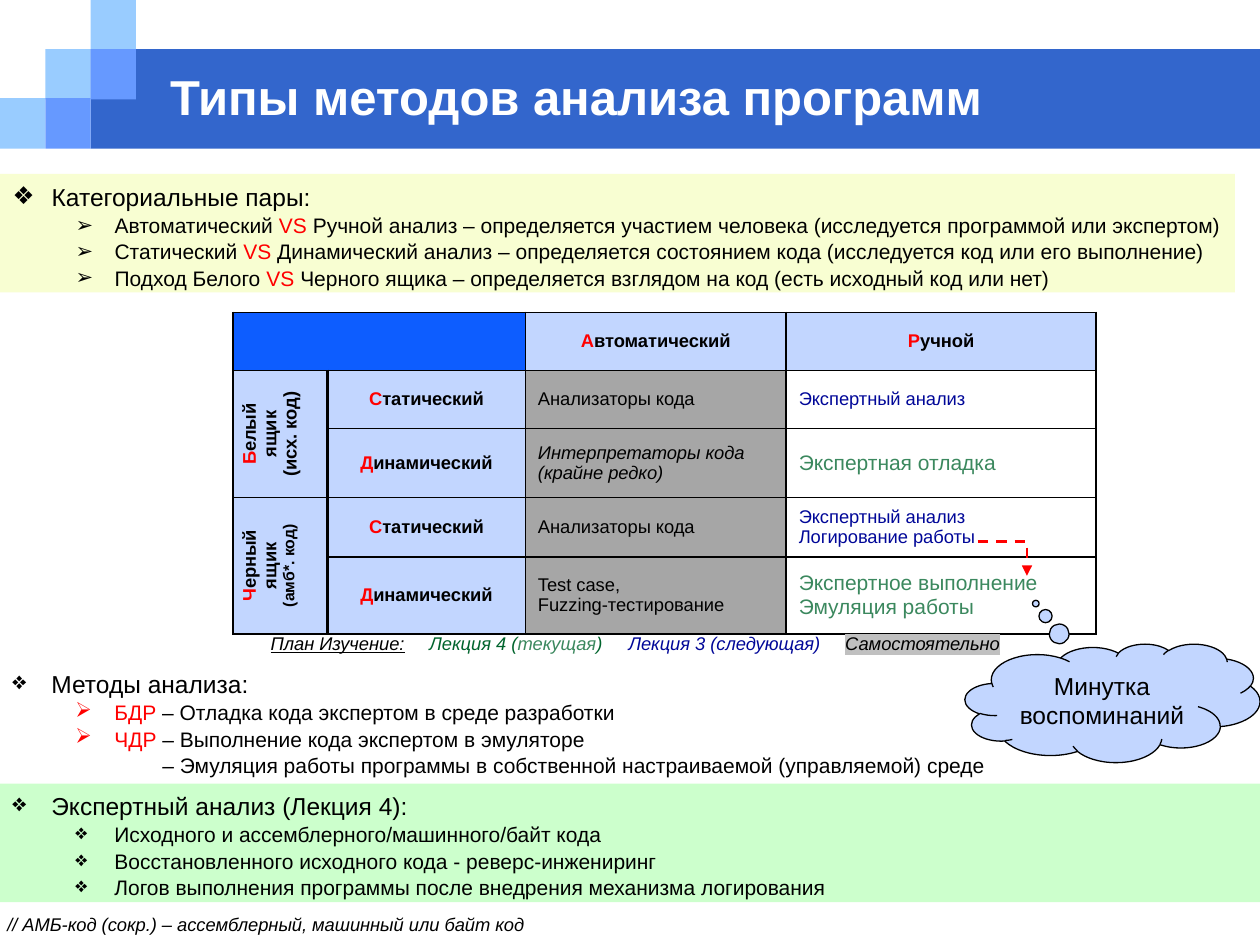
from dataclasses import dataclass, replace
from itertools import accumulate

from lxml.etree import SubElement
from pptx import Presentation
from pptx.dml.color import RGBColor
from pptx.enum.dml import MSO_LINE
from pptx.enum.shapes import MSO_CONNECTOR, MSO_SHAPE
from pptx.enum.text import MSO_ANCHOR, MSO_AUTO_SIZE, PP_ALIGN
from pptx.oxml.ns import qn
from pptx.util import Inches, Pt

BLACK, RED, NAVY, GREEN, DARK_GREEN = "000000", "FF0000", "000798", "3B885E", "00642D"
PALE_BLUE, GRAY = "C2D6FF", "A6A6A6"


@dataclass(frozen=True)
class Span:
    text: str
    color: str = BLACK
    size: float = 10.5
    bold: bool = False
    italic: bool = False
    underline: bool = False
    highlight: str = ""


@dataclass(frozen=True)
class Item:
    spans: list
    bullet: str = "➢"
    level: int = 1
    indent: float = 0.81


@dataclass(frozen=True)
class Cell:
    lines: list
    fill: str = ""
    centered: bool = False
    vertical: bool = False


def rgb(color: str) -> RGBColor:
    return RGBColor.from_string(color)


def write(paragraph, spans: list) -> None:
    for index, span in enumerate(spans):
        written = len(paragraph.runs)
        if index == 0:
            paragraph.text = span.text
        else:
            paragraph.add_run().text = span.text
        for run in paragraph.runs[written:]:
            font = run.font
            font.name, font.size = "Arial", Pt(span.size)
            font.bold, font.italic, font.underline = span.bold, span.italic, span.underline
            font.color.rgb = rgb(span.color)
            if span.highlight:
                highlight = SubElement(run._r.rPr, qn("a:highlight"))
                SubElement(highlight, qn("a:srgbClr"), val=span.highlight)
                run._r.rPr.find(qn("a:solidFill")).addnext(highlight)


def place(shape, left: float, top: float, width: float, height: float) -> None:
    shape.left, shape.top = Inches(left), Inches(top)
    shape.width, shape.height = Inches(width), Inches(height)


def add_text_box(slide, left: float, top: float, width: float, height: float):
    box = slide.shapes.add_textbox(Inches(left), Inches(top), Inches(width), Inches(height))
    box.text_frame.word_wrap = True
    return box


def add_filled_shape(slide, kind, box: tuple, fill: str):
    shape = slide.shapes.add_shape(kind, *map(Inches, box))
    shape.shadow.inherit = False
    shape.fill.solid()
    shape.fill.fore_color.rgb = rgb(fill)
    shape.line.fill.background()
    return shape


def fill_list(shape, heading: str, items: list, fill: str = "") -> None:
    if fill:
        shape.fill.solid()
        shape.fill.fore_color.rgb = rgb(fill)
    frame = shape.text_frame
    frame.word_wrap, frame.auto_size = True, MSO_AUTO_SIZE.NONE
    frame.vertical_anchor = MSO_ANCHOR.TOP
    entries = [Item([Span(heading, size=14)], "❖", 0, 0.31), *items]
    for index, item in enumerate(entries):
        paragraph = frame.add_paragraph() if index else frame.paragraphs[0]
        write(paragraph, item.spans)
        paragraph.level, paragraph.line_spacing = item.level, 1.05
        paragraph.space_before = paragraph.space_after = Pt(0)
        properties = paragraph._p.get_or_add_pPr()
        properties.set("marL", str(Inches(item.indent)))
        properties.set("indent", str(-Inches(0.31) if item.bullet else 0))
        if item.bullet:
            SubElement(properties, qn("a:buChar"), char=item.bullet)
        else:
            SubElement(properties, qn("a:buNone"))


def versus(first: str, second: str) -> Item:
    return Item([Span(first + " ", size=12), Span("VS", RED, 12), Span(" " + second, size=12)])


def label(first: str, rest: str, vertical: bool = False, note: Span = None) -> Cell:
    lines = [[Span(first, RED, bold=True), Span(rest, bold=True)]]
    if note:
        lines.append([replace(note, bold=True)])
    return Cell(lines, PALE_BLUE, True, vertical)


def body(*spans: Span, fill: str = "") -> Cell:
    return Cell([[span] for span in spans], fill)


def fill_cell(table_cell, cell: Cell) -> None:
    table_cell.vertical_anchor = MSO_ANCHOR.MIDDLE
    for index, spans in enumerate(cell.lines):
        frame = table_cell.text_frame
        paragraph = frame.add_paragraph() if index else frame.paragraphs[0]
        write(paragraph, spans)
        paragraph.alignment = PP_ALIGN.CENTER if cell.centered else PP_ALIGN.LEFT
    if cell.fill:
        table_cell.fill.solid()
        table_cell.fill.fore_color.rgb = rgb(cell.fill)
    if cell.vertical:
        table_cell._tc.get_or_add_tcPr().set("vert", "vert270")


def add_borders(table_cell, widths: dict) -> None:
    properties = table_cell._tc.get_or_add_tcPr()
    for index, side in enumerate("LRTB"):
        line = SubElement(properties, qn(f"a:ln{side}"), w=str(Pt(widths.get(side, 1))))
        SubElement(SubElement(line, qn("a:solidFill")), qn("a:srgbClr"), val=BLACK)
        properties.insert(index, line)


def add_methods_table(slide) -> None:
    columns, rows = [0.75, 1.57, 2.07, 2.46], [0.46, 0.46, 0.55, 0.47, 0.51]
    frame = slide.shapes.add_table(len(rows), len(columns), Inches(1.85), Inches(2.48),
                                   Inches(sum(columns)), Inches(sum(rows)))
    table = frame.table
    table.first_row = table.horz_banding = False
    for column, width in zip(table.columns, columns):
        column.width = Inches(width)
    for row, height in zip(table.rows, rows):
        row.height = Inches(height)
    static, dynamic = label("С", "татический"), label("Д", "инамический")
    analysers = body(Span("Анализаторы кода"), fill=GRAY)
    expert = Span("Экспертный анализ", NAVY)
    cells = [
        [Cell([], "0D5DFF"), None, label("А", "втоматический"), label("Р", "учной")],
        [label("Б", "елый ящик", True, Span("(исх. код)")), static, analysers, body(expert)],
        [None, dynamic,
         body(Span("Интерпретаторы кода", italic=True), Span("(крайне редко)", italic=True), fill=GRAY),
         body(Span("Экспертная отладка", GREEN, 12))],
        [label("Ч", "ерный ящик", True, Span("(амб*. код)", size=9)), static, analysers,
         body(expert, Span("Логирование работы", NAVY))],
        [None, dynamic, body(Span("Test case,\vFuzzing-тестирование"), fill=GRAY),
         body(Span("Экспертное выполнение", GREEN, 12), Span("Эмуляция работы", GREEN, 12))],
    ]
    for row_index, row in enumerate(cells):
        for column_index, cell in enumerate(row):
            table_cell = table.cell(row_index, column_index)
            table_cell.fill.background()
            if cell:
                fill_cell(table_cell, cell)
            thick = {0: {"R": 1.5}, 1: {"L": 1.5}}.get(column_index, {}) if row_index else {}
            add_borders(table_cell, thick)
    for start, end in [((0, 0), (0, 1)), ((1, 0), (2, 0)), ((3, 0), (4, 0))]:
        table.cell(*start).merge(table.cell(*end))


def add_plan(slide) -> None:
    paragraph = add_text_box(slide, 2.05, 4.97, 6.22, 0.28).text_frame.paragraphs[0]
    spans = [Span("План Изучение:", underline=True), Span("\tЛекция 4 (", DARK_GREEN),
             Span("текущая", GREEN), Span(")", DARK_GREEN), Span("\tЛекция 3 (следующая)", NAVY),
             Span("\t"), Span("Самостоятельно", highlight="C0C0C0")]
    write(paragraph, [replace(span, italic=True) for span in spans])
    tabs = SubElement(paragraph._p.get_or_add_pPr(), qn("a:tabLst"))
    for position in accumulate([1.26, 1.58, 1.72]):
        SubElement(tabs, qn("a:tab"), pos=str(Inches(position)), algn="l")


def add_arrow(slide) -> None:
    arrow = slide.shapes.add_connector(MSO_CONNECTOR.ELBOW, Inches(7.76), Inches(4.3),
                                       Inches(8.15), Inches(4.57))
    arrow.line.color.rgb, arrow.line.width = rgb(RED), Pt(1.5)
    arrow.line.dash_style = MSO_LINE.DASH
    SubElement(arrow.line._get_or_add_ln(), qn("a:tailEnd"), type="triangle")
    properties = arrow._element.spPr
    SubElement(properties, qn("a:effectLst"))
    guides = properties.find(qn("a:prstGeom")).get_or_add_avLst()
    SubElement(guides, qn("a:gd"), name="adj1", fmla="val 100300")


def main() -> None:
    presentation = Presentation()
    presentation.slide_width, presentation.slide_height = Inches(10), Inches(7.5)
    slide = presentation.slides.add_slide(presentation.slide_layouts[1])

    # Header band and squares, behind the title
    band = [((0.72, 0.39, 9.28, 0.79), "3366CC")]
    squares = [((column * 0.36, row * 0.39, 0.36, 0.4), color) for column, row, color in
               [(0, 2, "99CCFF"), (1, 1, "99CCFF"), (2, 0, "99CCFF"), (2, 1, "6699FF"), (1, 2, "6699FF")]]
    for index, (box, color) in enumerate(band + squares):
        shape = add_filled_shape(slide, MSO_SHAPE.RECTANGLE, box, color)
        slide.shapes.element.insert(2 + index, shape._element)

    # Title
    title = slide.shapes.title
    place(title, 1.25, 0.5, 8.08, 0.53)
    title.text_frame.auto_size = MSO_AUTO_SIZE.NONE
    title.text_frame.vertical_anchor = MSO_ANCHOR.MIDDLE
    write(title.text_frame.paragraphs[0], [Span("Типы методов анализа программ", "FFFFFF", 28, True)])
    title.text_frame.paragraphs[0].alignment = PP_ALIGN.LEFT

    # Lists
    pairs = slide.placeholders[1]
    place(pairs, 0, 1.38, 9.8, 0.94)
    fill_list(pairs, "Категориальные пары:", [
        versus("Автоматический", "Ручной анализ – определяется участием человека (исследуется программой или экспертом)"),
        versus("Статический", "Динамический анализ – определяется состоянием кода (исследуется код или его выполнение)"),
        versus("Подход Белого", "Черного ящика – определяется взглядом на код (есть исходный код или нет)"),
    ], "F8FED2")
    fill_list(add_text_box(slide, 0, 5.25, 10, 0.94), "Методы анализа:", [
        Item([Span("БДР", RED, 12), Span(" – Отладка кода экспертом в среде разработки", size=12)]),
        Item([Span("ЧДР", RED, 12), Span(" – Выполнение кода экспертом в эмуляторе", size=12)]),
        Item([Span("– Эмуляция работы программы в собственной настраиваемой (управляемой) среде", size=12)],
             "", indent=1.19),
    ])
    fill_list(add_text_box(slide, 0, 6.22, 10, 0.94), "Экспертный анализ (Лекция 4):", [
        Item([Span(text, size=12)], "❖") for text in (
            "Исходного и ассемблерного/машинного/байт кода",
            "Восстановленного исходного кода - реверс-инжениринг",
            "Логов выполнения программы после внедрения механизма логирования")
    ], "CCFFCC")

    # Table with its plan line and arrow
    add_methods_table(slide)
    add_plan(slide)
    add_arrow(slide)

    # Footnote
    footnote = add_text_box(slide, -0.04, 7.2, 10.04, 0.28)
    write(footnote.text_frame.paragraphs[0],
          [Span("// АМБ-код (сокр.) – ассемблерный, машинный или байт код", italic=True)])

    # Thought cloud
    cloud = add_filled_shape(slide, MSO_SHAPE.CLOUD_CALLOUT, (7.66, 5.11, 2.34, 0.94), PALE_BLUE)
    cloud.adjustments[0], cloud.adjustments[1] = -0.26, -0.84
    cloud.line.color.rgb, cloud.line.width = rgb(BLACK), Pt(0.75)
    write(cloud.text_frame.paragraphs[0], [Span("Минутка воспоминаний", size=14)])
    cloud.text_frame.paragraphs[0].alignment = PP_ALIGN.CENTER

    presentation.save("out.pptx")


if __name__ == "__main__":
    main()
